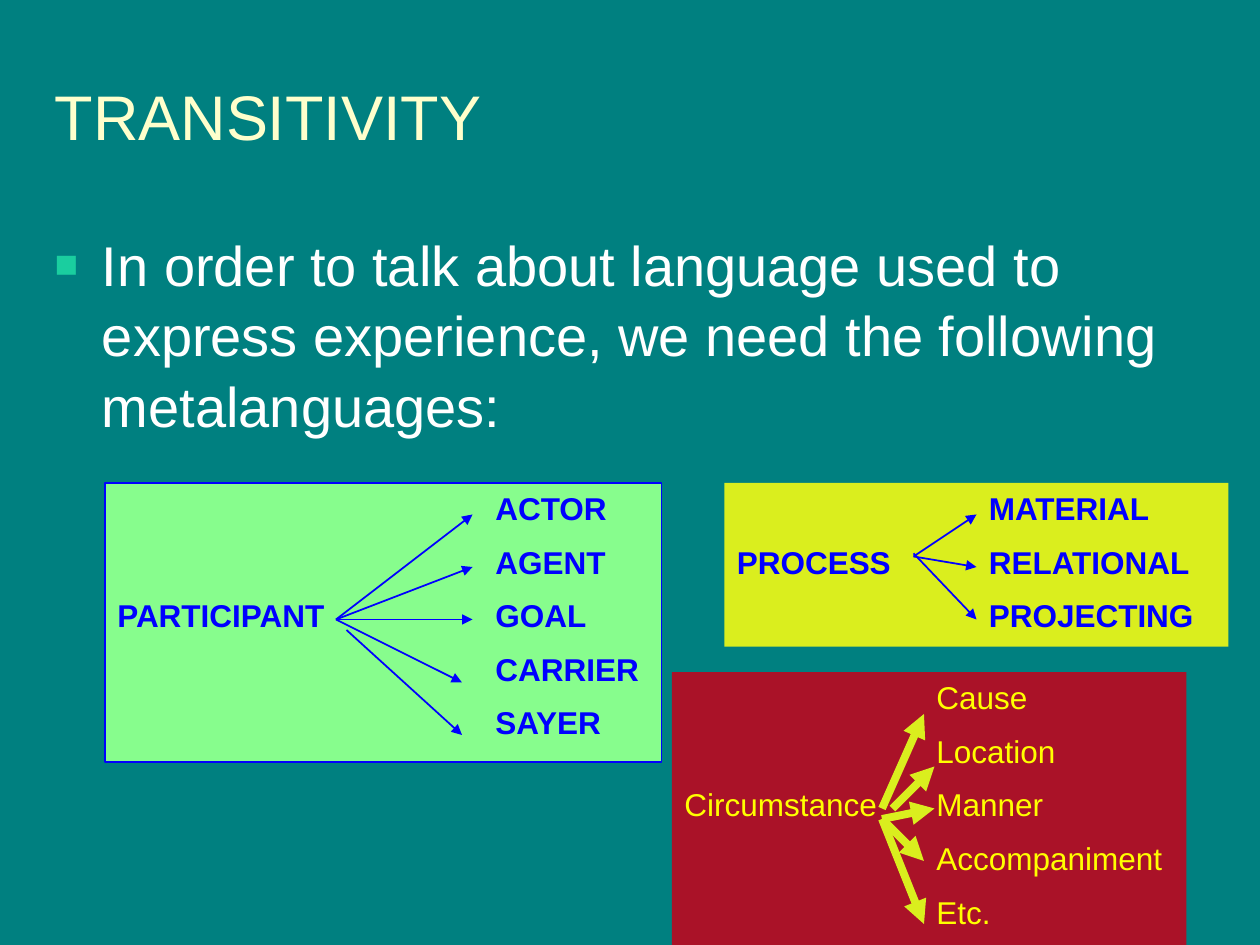
from lxml import etree
from pptx import Presentation
from pptx import util as u
from pptx.dml.color import RGBColor
from pptx.enum import shapes, text
from pptx.oxml.ns import qn

PX = 7620  # EMU, 120 px to the inch
TAB = 120

TEAL = RGBColor(0x00, 0x80, 0x80)
CREAM = RGBColor(0xFF, 0xFF, 0xCC)
WHITE = RGBColor(0xFF, 0xFF, 0xFF)
MINT = RGBColor(0x1A, 0xCE, 0x9F)
GREEN = RGBColor(0x87, 0xFD, 0x8D)
BLUE = RGBColor(0x00, 0x00, 0xFF)
LIME = RGBColor(0xDA, 0xEE, 0x1E)
CRIMSON = RGBColor(0xAA, 0x12, 0x28)
YELLOW = RGBColor(0xFF, 0xFF, 0x00)


def px(*lengths):
    return [u.Emu(length * PX) for length in lengths]


def write(frame, lines, size, color, bold=False, anchor=text.MSO_ANCHOR.TOP, before=0):
    """Fill a frame with lines; before is the paragraph gap in percent."""
    frame.word_wrap = True
    frame.auto_size = text.MSO_AUTO_SIZE.NONE
    frame.vertical_anchor = anchor
    for index, line in enumerate(lines):
        paragraph = frame.paragraphs[0] if index == 0 else frame.add_paragraph()
        paragraph.alignment = text.PP_ALIGN.LEFT
        run = paragraph.add_run()
        run.text = line
        run.font.name = "Arial"
        run.font.size = u.Pt(size)
        run.font.bold = bold
        run.font.color.rgb = color
        spacing = etree.SubElement(paragraph._p.get_or_add_pPr(), qn("a:spcBef"))
        etree.SubElement(spacing, qn("a:spcPct"), val=str(before * 1000))


def place(shape, box):
    shape.left, shape.top, shape.width, shape.height = px(*box)


def add_title(slide, box, title):
    place(slide.shapes.title, box)
    write(slide.shapes.title.text_frame, [title], 36, CREAM,
          anchor=text.MSO_ANCHOR.MIDDLE)


def add_body(slide, box, statement):
    body = slide.placeholders[1]
    place(body, box)
    write(body.text_frame, [statement], 32, WHITE, before=20)
    paragraph = body.text_frame.paragraphs[0]
    paragraph.line_spacing = 1.05
    props = paragraph._p.get_or_add_pPr()
    props.set("marL", str(45 * PX))
    props.set("indent", str(-45 * PX))
    bullet_color = etree.SubElement(props, qn("a:buClr"))
    etree.SubElement(bullet_color, qn("a:srgbClr"), val=str(MINT))
    etree.SubElement(props, qn("a:buSzPct"), val="70000")
    etree.SubElement(props, qn("a:buFont"), typeface="Arial")
    etree.SubElement(props, qn("a:buChar"), char="■")


def add_arrow(slide, start, end, color, width):
    arrow = slide.shapes.add_connector(
        shapes.MSO_CONNECTOR.STRAIGHT, *px(*start, *end))
    arrow.line.color.rgb = color
    arrow.line.width = u.Pt(width)
    etree.SubElement(arrow.line._get_or_add_ln(), qn("a:tailEnd"), type="triangle")
    etree.SubElement(arrow._element.spPr, qn("a:effectLst"))


def add_branch_panel(slide, box, lines, arrows, fill, color, arrow_color,
                     arrow_width=1, bold=True, outline=None):
    """Draw a category with arrows to its kinds; arrows are relative to the box."""
    panel = slide.shapes.add_shape(shapes.MSO_SHAPE.RECTANGLE, *px(*box))
    panel.shadow.inherit = False
    panel.fill.solid()
    panel.fill.fore_color.rgb = fill
    if outline is None:
        panel.line.fill.background()
    else:
        panel.line.color.rgb = outline
        panel.line.width = u.Pt(1)
    write(panel.text_frame, lines, 18, color, bold=bold, before=50)
    for paragraph in panel.text_frame.paragraphs:
        stops = etree.SubElement(paragraph._p.get_or_add_pPr(), qn("a:tabLst"))
        for number in (1, 2, 3):
            etree.SubElement(stops, qn("a:tab"), pos=str(number * TAB * PX), algn="l")

    left, top = box[:2]
    for (x1, y1), (x2, y2) in arrows:
        add_arrow(slide, (left + x1, top + y1), (left + x2, top + y2),
                  arrow_color, arrow_width)


def main():
    deck = Presentation()
    deck.slide_width, deck.slide_height = px(1200, 900)
    slide = deck.slides.add_slide(deck.slide_layouts[1])
    slide.background.fill.solid()
    slide.background.fill.fore_color.rgb = TEAL

    add_title(slide, (40, 30, 1120, 160), "TRANSITIVITY")
    add_body(slide, (40, 210, 1120, 210),
             "In order to talk about language used to express experience, "
             "we need the following metalanguages:")

    add_branch_panel(
        slide, (100, 460, 530, 266),
        ["\t\t\tACTOR", "\t\t\tAGENT", "PARTICIPANT\t\tGOAL",
         "\t\t\tCARRIER", "\t\t\tSAYER"],
        [((220, 130), (350, 30)), ((220, 130), (350, 80)), ((220, 130), (350, 130)),
         ((220, 130), (340, 190)), ((230, 140), (340, 240))],
        GREEN, BLUE, BLUE, outline=BLUE)
    add_branch_panel(
        slide, (690, 460, 480, 156),
        ["\t\tMATERIAL", "PROCESS\tRELATIONAL", "\t\tPROJECTING"],
        [((180, 70), (240, 30)), ((180, 70), (240, 80)), ((180, 67), (240, 130))],
        LIME, BLUE, BLUE)
    add_branch_panel(
        slide, (640, 640, 490, 265),
        ["\t\tCause", "\t\tLocation", "Circumstance\tManner",
         "\t\tAccompaniment", "\t\tEtc."],
        [((200, 130), (240, 40)), ((210, 130), (250, 90)), ((200, 140), (250, 130)),
         ((200, 140), (240, 180)), ((200, 140), (240, 240))],
        CRIMSON, YELLOW, LIME, arrow_width=4.5, bold=False)

    deck.save("out.pptx")


if __name__ == "__main__":
    main()
